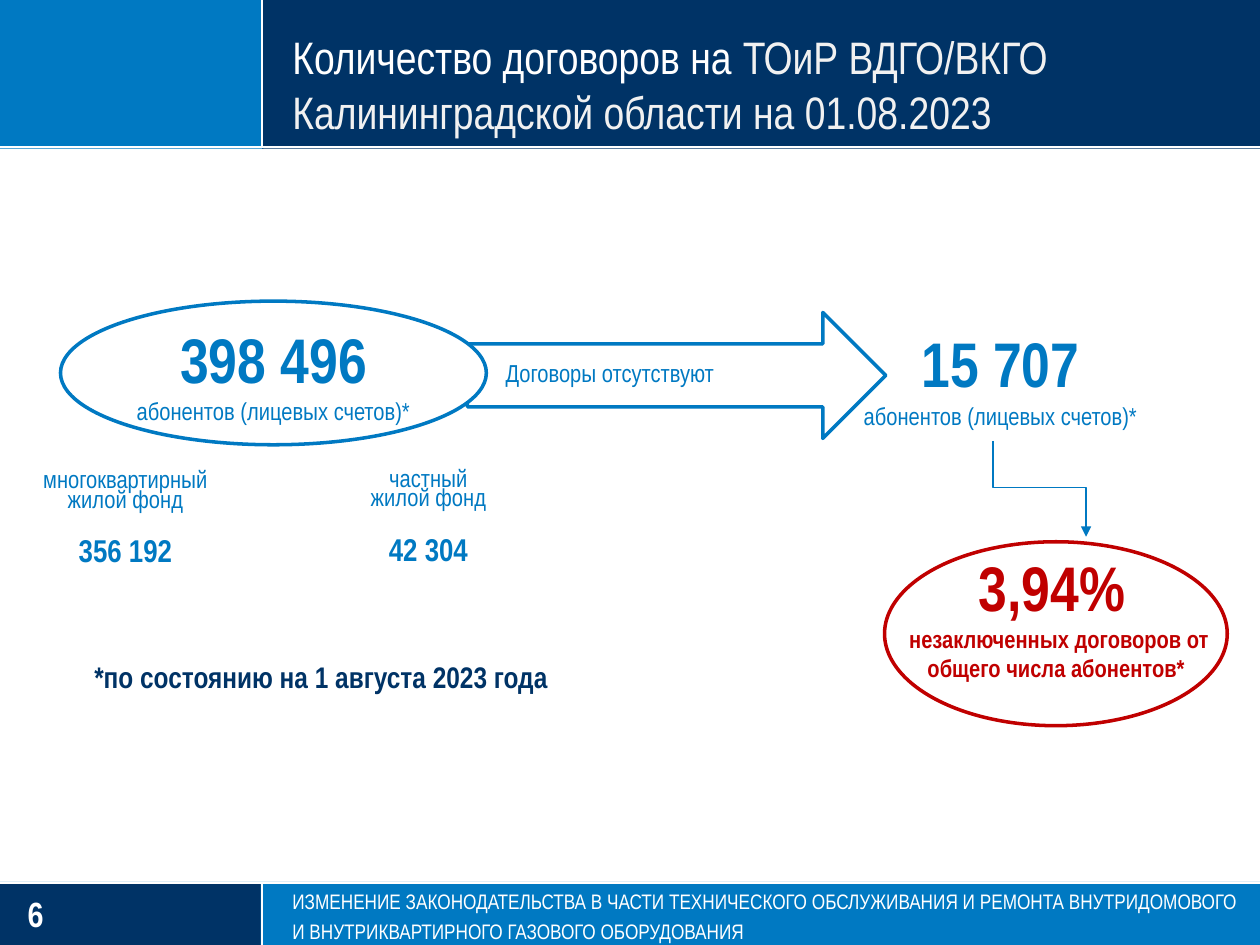
from copy import deepcopy
from dataclasses import dataclass
from typing import NamedTuple

from lxml.etree import SubElement
from pptx import Presentation
from pptx.dml.color import RGBColor
from pptx.enum.shapes import MSO_CONNECTOR, MSO_SHAPE
from pptx.enum.text import MSO_ANCHOR, MSO_AUTO_SIZE, PP_ALIGN
from pptx.oxml.ns import qn
from pptx.util import Inches, Pt

WIDTH, HEIGHT = Inches(10), Inches(7.5)
COLS, ROWS = 100, 75
MID, LEFT = PP_ALIGN.CENTER, PP_ALIGN.LEFT


@dataclass(frozen=True)
class Theme:
    font: str = "Arial Narrow"
    blue: str = "0079C2"
    navy: str = "003366"
    white: str = "FFFFFF"
    pale: str = "F1F1F1"
    red: str = "C00000"
    huge: int = 36
    head: int = 26
    page: int = 20
    count: int = 18
    note: int = 17
    text: int = 14
    foot: int = 12


class Box(NamedTuple):
    col: float
    row: float
    wide: float
    high: float

    def place(self) -> tuple:
        return (across(self.col), down(self.row), across(self.wide), down(self.high))


class Fund(NamedTuple):
    box: Box
    name: str
    count: str


THEME = Theme()
BANDS = [
    (Box(0, 70, 100, 5), THEME.blue),
    (Box(0, 70.1, 20.7, 4.9), THEME.navy),
    (Box(0, 0, 20.9, 11.8), THEME.blue),
    (Box(20.8, 0, 79.2, 11.8), THEME.navy),
]
RULES = [
    Box(0, 11.7, 100, 0),
    Box(20.8, 70, 0, 5),
    Box(0, 70.1, 100, 0),
    Box(20.8, 0, 0, 11.7),
]
FUNDS = [
    Fund(Box(2.7, 36.4, 14.5, 9.8), "многоквартирный\nжилой фонд", "356 192"),
    Fund(Box(29, 36.3, 10, 9.8), "частный\nжилой фонд", "42 304"),
]
CLIENTS = "абонентов (лицевых счетов)*"


def across(cols: float) -> int:
    return round(WIDTH * cols / COLS)


def down(rows: float) -> int:
    return round(HEIGHT * rows / ROWS)


def tint(code: str) -> RGBColor:
    return RGBColor.from_string(code)


def write(para, text: str, *, size: int, color: str, bold=False, align=LEFT, pitch=None):
    para.alignment = align
    if pitch:
        para.line_spacing = pitch
    for rank, part in enumerate(text.split("\n")):
        if rank:
            para.add_line_break()
            para._p[-1].append(deepcopy(run._r.rPr))
        run = para.add_run()
        run.text = part
        font = run.font
        font.name, font.size, font.bold = THEME.font, Pt(size), bold
        font.color.rgb = tint(color)


def pair(frame, count: str, label: str, color: str, bold=False):
    write(frame.paragraphs[0], count, size=THEME.huge, color=color, bold=True, align=MID)
    write(frame.add_paragraph(), label, size=THEME.text, color=color, bold=bold, align=MID)


def bare(frame):
    frame.margin_left = frame.margin_right = frame.margin_top = frame.margin_bottom = 0


def draw(shapes, kind, box: Box, *, fill=None, line=None):
    shape = shapes.add_shape(kind, *box.place())
    shape.shadow.inherit = False
    if fill:
        shape.fill.solid()
        shape.fill.fore_color.rgb = tint(fill)
    else:
        shape.fill.background()
    if line:
        shape.line.color.rgb = tint(line)
        shape.line.width = Pt(2)
    else:
        shape.line.fill.background()
    return shape


def join(shapes, kind, box: Box, *, color: str, width: float):
    left, top, wide, high = box.place()
    link = shapes.add_connector(kind, left, top, left + wide, top + high)
    link.line.color.rgb = tint(color)
    link.line.width = Pt(width)
    SubElement(link.element.spPr, qn("a:effectLst"))
    return link


def label(shapes, box: Box):
    frame = shapes.add_textbox(*box.place()).text_frame
    frame.word_wrap = True
    frame.auto_size = MSO_AUTO_SIZE.SHAPE_TO_FIT_TEXT
    return frame


def bend(shapes, box: Box):
    link = join(shapes, MSO_CONNECTOR.ELBOW, box, color=THEME.blue, width=1)
    props = link.element.spPr
    frame = props.find(qn("a:xfrm"))
    frame.set("rot", "16200000")
    frame.set("flipH", "1")
    guides = props.find(qn("a:prstGeom")).find(qn("a:avLst"))
    SubElement(guides, qn("a:gd"), name="adj1", fmla="val 48800")
    SubElement(props.find(qn("a:ln")), qn("a:tailEnd"), type="triangle")


def edge(cell):
    props = cell._tc.get_or_add_tcPr()
    for rank, side in enumerate(("lnL", "lnR", "lnT", "lnB")):
        line = SubElement(props, qn(f"a:{side}"), w=str(Pt(1)))
        SubElement(SubElement(line, qn("a:solidFill")), qn("a:srgbClr"), val=THEME.white)
        props.insert(rank, line)


def table(shapes, fund: Fund):
    grid = shapes.add_table(2, 1, *fund.box.place()).table
    grid.first_row = grid.horz_banding = False
    looks = [
        (fund.name, 5.3, dict(size=THEME.text, pitch=0.83)),
        (fund.count, 4.4, dict(size=THEME.count, bold=True, pitch=1.07)),
    ]
    for rank, (text, high, look) in enumerate(looks):
        grid.rows[rank].height = down(high)
        cell = grid.cell(rank, 0)
        cell.fill.solid()
        cell.fill.fore_color.rgb = tint(THEME.white)
        edge(cell)
        cell.margin_left = cell.margin_right = cell.margin_top = across(0.1)
        cell.margin_bottom = 0
        cell.vertical_anchor = MSO_ANCHOR.MIDDLE
        write(cell.text_frame.paragraphs[0], text, color=THEME.blue, align=MID, **look)


def settle(shapes, holder, box: Box, anchor):
    holder.left, holder.top, holder.width, holder.height = box.place()
    shapes.element.append(holder.element)
    frame = holder.text_frame
    bare(frame)
    frame.word_wrap = True
    frame.auto_size = MSO_AUTO_SIZE.NONE
    frame.vertical_anchor = anchor
    return frame.paragraphs[0]


def main():
    deck = Presentation()
    deck.slide_width, deck.slide_height = WIDTH, HEIGHT
    slide = deck.slides.add_slide(deck.slide_layouts[1])
    shapes = slide.shapes
    title, body = slide.placeholders

    for box, fill in BANDS:
        draw(shapes, MSO_SHAPE.RECTANGLE, box, fill=fill)
    for box in RULES:
        join(shapes, MSO_CONNECTOR.STRAIGHT, box, color=THEME.white, width=1.25)
    page = label(shapes, Box(2.2, 70.8, 16.3, 3.4))
    bare(page)
    page.vertical_anchor = MSO_ANCHOR.MIDDLE
    write(page.paragraphs[0], "6", size=THEME.page, color=THEME.white, bold=True)

    draw(shapes, MSO_SHAPE.RIGHT_ARROW, Box(37.1, 24.8, 33.2, 10), fill=THEME.white, line=THEME.blue)
    write(label(shapes, Box(35, 27.9, 26.8, 3.4)).paragraphs[0], "Договоры отсутствуют",
          size=THEME.text, color=THEME.blue, align=MID)
    pair(label(shapes, Box(67.4, 25.3, 24, 16.8)), "15 707", CLIENTS, THEME.blue)
    for fund in FUNDS:
        table(shapes, fund)
    write(label(shapes, Box(6.5, 51.8, 49.4, 3.9)).paragraphs[0],
          "*по состоянию на 1 августа 2023 года", size=THEME.note, color=THEME.navy, bold=True)
    pair(label(shapes, Box(70.2, 43, 27.7, 11.8)), "3,94% ",
         "незаключенных договоров от общего числа абонентов* ", THEME.red, bold=True)
    draw(shapes, MSO_SHAPE.OVAL, Box(70.2, 43, 27.2, 14.6), line=THEME.red)
    bend(shapes, Box(78.7, 35.1, 7.6, 7.4))
    total = draw(shapes, MSO_SHAPE.OVAL, Box(4.8, 23.9, 33.8, 11.4), fill=THEME.white, line=THEME.blue)
    total.text_frame.vertical_anchor = MSO_ANCHOR.MIDDLE
    pair(total.text_frame, "398 496", CLIENTS, THEME.blue)

    foot = settle(shapes, body, Box(23.2, 70.3, 76, 4.5), MSO_ANCHOR.MIDDLE)
    props = foot._p.get_or_add_pPr()
    props.set("marL", "0")
    props.set("indent", "0")
    SubElement(props, qn("a:buNone"))
    foot.space_before = Pt(0)
    write(foot, "ИЗМЕНЕНИЕ ЗАКОНОДАТЕЛЬСТВА В ЧАСТИ ТЕХНИЧЕСКОГО ОБСЛУЖИВАНИЯ И РЕМОНТА "
          "ВНУТРИДОМОВОГО И ВНУТРИКВАРТИРНОГО ГАЗОВОГО ОБОРУДОВАНИЯ",
          size=THEME.foot, color=THEME.white, pitch=Pt(17))
    head = settle(shapes, title, Box(23.2, 0, 74.3, 11), MSO_ANCHOR.BOTTOM)
    write(head, "Количество договоров на ", size=THEME.head, color=THEME.white)
    write(head, "ТОиР ВДГО/ВКГО \nКалининградской области на 01.08.2023",
          size=THEME.head, color=THEME.pale)
    deck.save("out.pptx")


if __name__ == "__main__":
    main()
